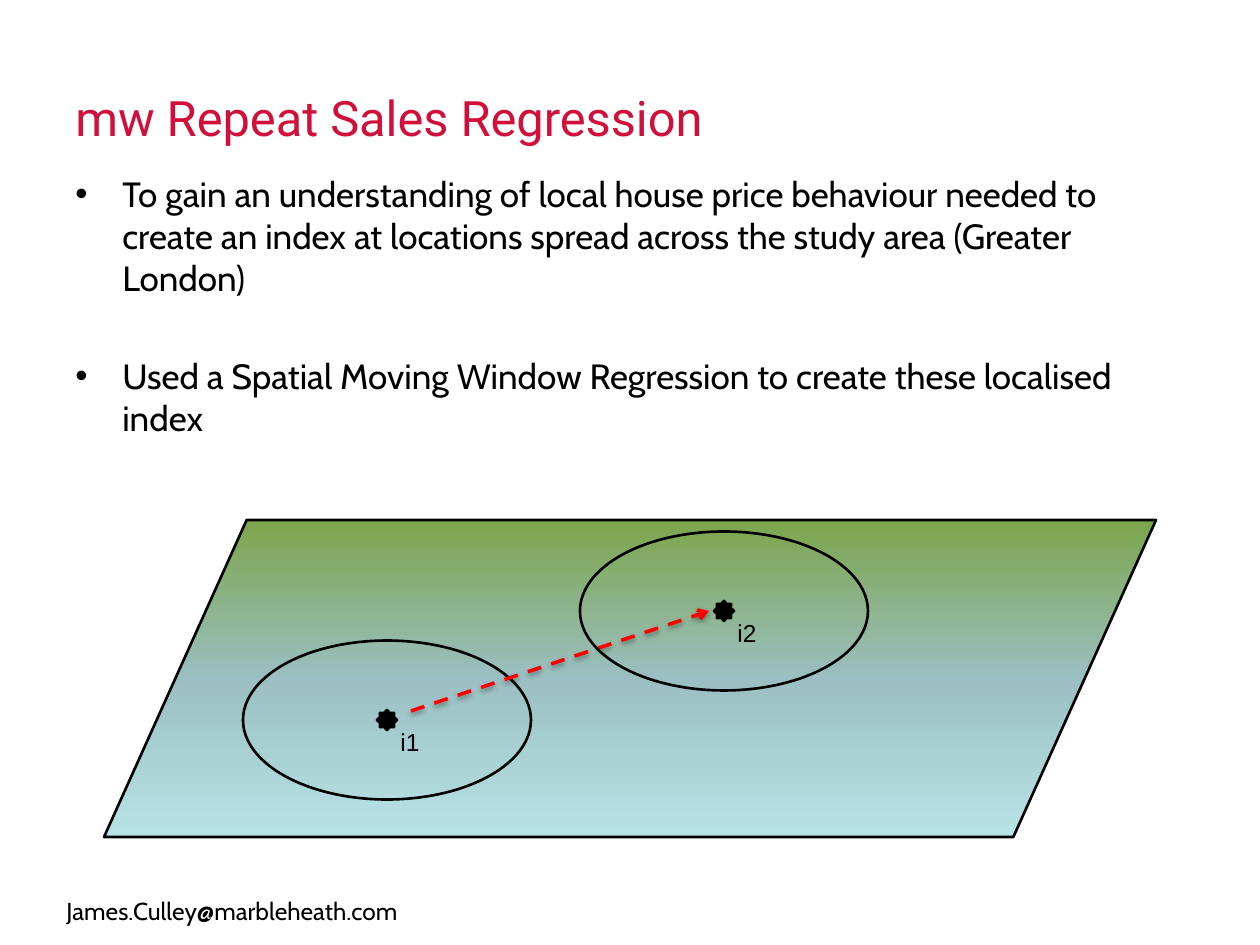
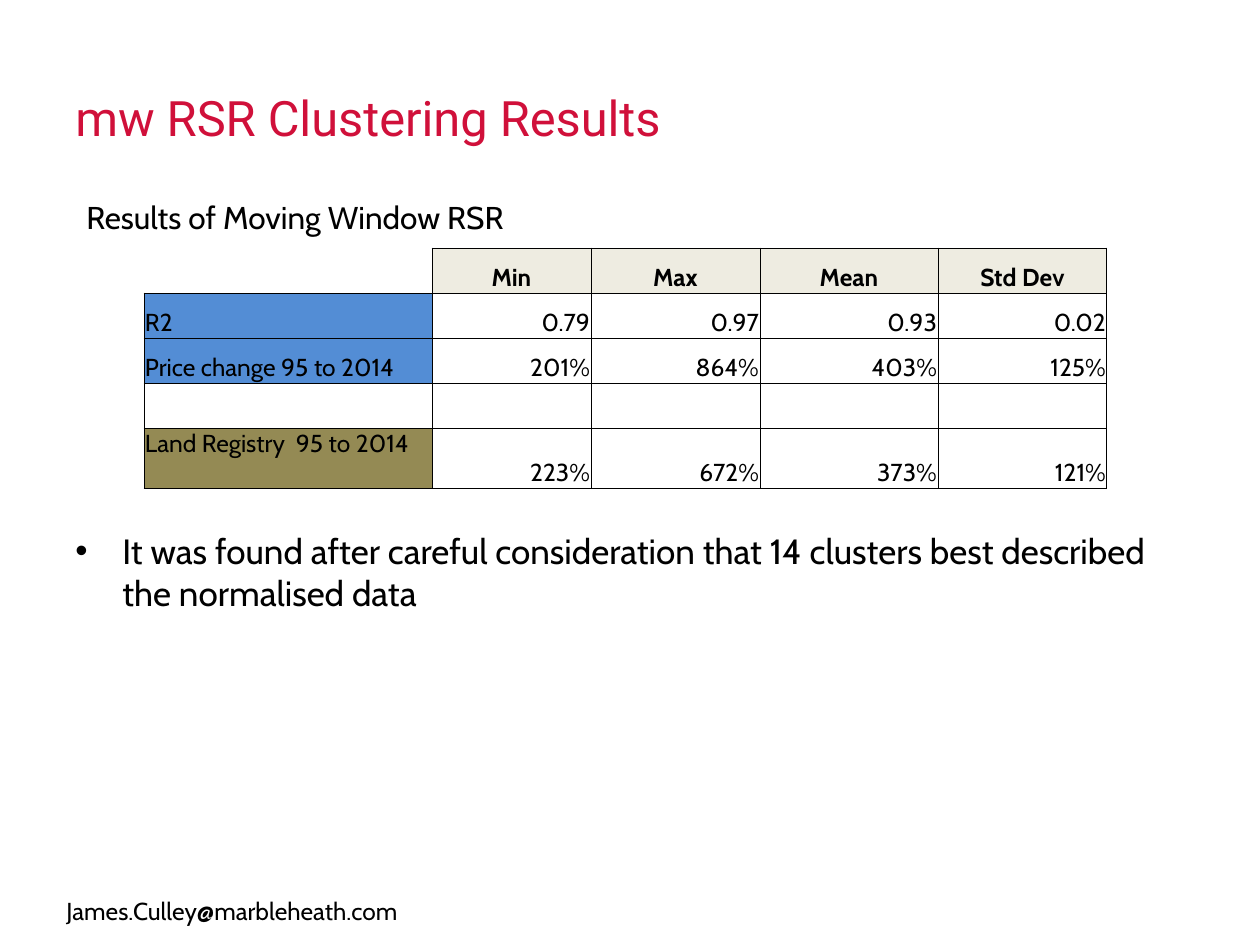
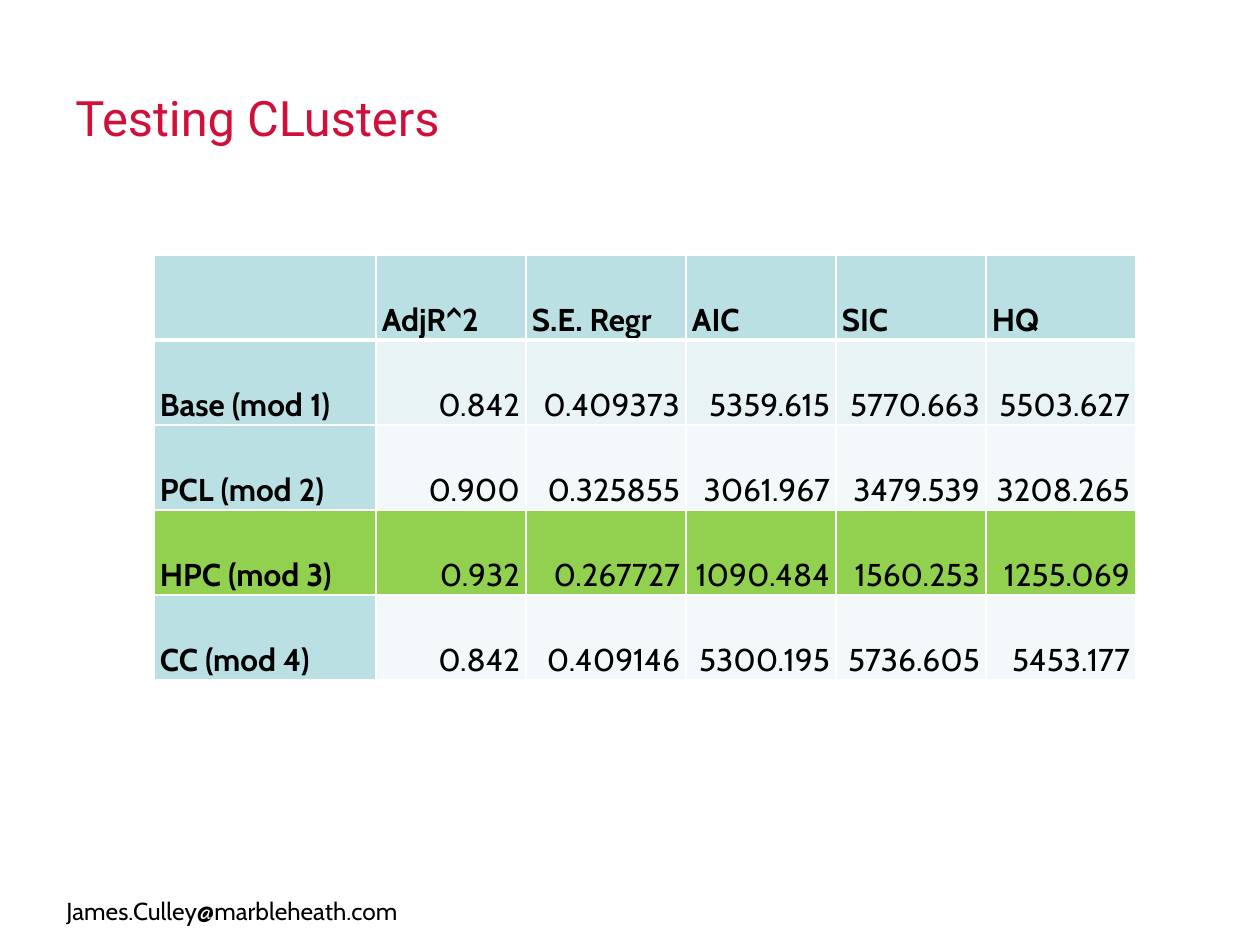
from copy import deepcopy

from lxml.etree import SubElement
from pptx import Presentation
from pptx.dml.color import RGBColor
from pptx.enum.dml import MSO_LINE
from pptx.enum.shapes import MSO_CONNECTOR, MSO_SHAPE
from pptx.enum.text import MSO_ANCHOR as Anchor, PP_ALIGN as Align
from pptx.oxml.ns import qn
from pptx.util import Pt

EMU_PER_PX = 914400 / 126
SLIDE_SIZE = (1260, 945)

BLACK = RGBColor(0x00, 0x00, 0x00)
WHITE = RGBColor(0xFF, 0xFF, 0xFF)
RED = RGBColor(0xFF, 0x00, 0x00)
CRIMSON = RGBColor(0xD0, 0x10, 0x3A)
BEIGE = RGBColor(0xEE, 0xEC, 0xE1)
BLUE = RGBColor(0x53, 0x8D, 0xD5)
OLIVE = RGBColor(0x94, 0x8A, 0x54)
TEAL = RGBColor(0xBB, 0xE0, 0xE3)
PALE_TEAL = RGBColor(0xE7, 0xF3, 0xF4)
PALEST_TEAL = RGBColor(0xF3, 0xF9, 0xFA)
GREEN = RGBColor(0x92, 0xD0, 0x50)
AREA_GRADIENT = ((0, RGBColor(0x7C, 0xA5, 0x4B)),
                 (0.5, RGBColor(0x9B, 0xBF, 0xC2)),
                 (1, RGBColor(0xB8, 0xE3, 0xE6)))

TITLE = {"name": "Roboto", "size": Pt(27.9), "color": CRIMSON}
BODY = {"name": "Cabin", "size": Pt(20), "color": BLACK}
CAPTION = BODY | {"size": Pt(18)}
SMALL = BODY | {"size": Pt(14)}
LABEL = SMALL | {"name": "Arial"}
FOOTER_TEXT = "James.Culley@marbleheath.com"


def px(length):
    return round(length * EMU_PER_PX)


def set_font(font, style):
    for name, value in style.items():
        if name == "color":
            font.color.rgb = value
        else:
            setattr(font, name, value)


def add_solid_color(parent, color):
    fill = SubElement(parent, qn("a:solidFill"))
    return SubElement(fill, qn("a:srgbClr"), val=str(color))


class Deck:
    def __init__(self):
        self.presentation = Presentation()
        self.presentation.slide_width, self.presentation.slide_height = map(px, SLIDE_SIZE)
        self.slide = None

    def new_slide(self, title):
        """Start a slide with the shared title and footer."""
        self.slide = self.presentation.slides.add_slide(self.presentation.slide_layouts[6])
        self.text((63, 38, 1134, 157), [title], TITLE, anchor=Anchor.MIDDLE)
        self.text((54, 890, 625, 43), [FOOTER_TEXT], SMALL)

    def text(self, box, lines, style, anchor=Anchor.TOP, wrap=True, bullets=False):
        frame = self.slide.shapes.add_textbox(*map(px, box)).text_frame
        frame.word_wrap = wrap
        frame.vertical_anchor = anchor
        for index, line in enumerate(lines):
            paragraph = frame.paragraphs[0] if index == 0 else frame.add_paragraph()
            if index:
                paragraph.space_before = Pt(32)
            if bullets:
                properties = paragraph._p.get_or_add_pPr()
                properties.set("marL", str(px(47)))
                properties.set("indent", str(px(-47)))
                SubElement(properties, qn("a:buFont"), typeface="Arial")
                SubElement(properties, qn("a:buChar"), char="•")
            run = paragraph.add_run()
            run.text = line
            set_font(run.font, style)

    def bullets(self, box, lines):
        self.text(box, lines, BODY, bullets=True)

    def shape(self, kind, box, fill=None):
        """Add a black-outlined shape; without a fill it is see-through."""
        shape = self.slide.shapes.add_shape(kind, *map(px, box))
        shape.shadow.inherit = False
        shape.line.color.rgb = BLACK
        shape.line.width = Pt(1.5)
        if fill is None:
            shape.fill.background()
        else:
            shape.fill.solid()
            shape.fill.fore_color.rgb = fill
        return shape

    def study_area(self, box):
        area = self.shape(MSO_SHAPE.PARALLELOGRAM, box)
        area.adjustments[0] = 0.45
        area.fill.gradient()
        area.fill.gradient_angle = 270
        stops = area._element.spPr.find(".//" + qn("a:gsLst"))
        stops.append(deepcopy(stops[-1]))
        for stop, (position, color) in zip(area.fill.gradient_stops, AREA_GRADIENT):
            stop.position = position
            stop.color.rgb = color

    def window(self, center_x, center_y, label):
        """Draw a regression window around a labelled point."""
        for kind, width, height, fill in ((MSO_SHAPE.STAR_8_POINT, 20, 20, BLACK),
                                          (MSO_SHAPE.OVAL, 288, 159, None)):
            self.shape(kind, (center_x - width / 2, center_y - height / 2, width, height), fill)
        self.text((center_x + 1, center_y + 1, 44, 43), [label], LABEL, wrap=False)

    def dashed_arrow(self, start, end):
        arrow = self.slide.shapes.add_connector(MSO_CONNECTOR.STRAIGHT, *map(px, start + end))
        arrow.line.color.rgb = RED
        arrow.line.width = Pt(2)
        arrow.line.dash_style = MSO_LINE.DASH
        properties = arrow._element.spPr
        SubElement(properties.find(qn("a:ln")), qn("a:tailEnd"), type="arrow")
        effects = SubElement(properties, qn("a:effectLst"))
        shadow = SubElement(effects, qn("a:outerShdw"), blurRad="40000", dist="20000",
                            dir="5400000", rotWithShape="0")
        color = SubElement(shadow, qn("a:srgbClr"), val=str(BLACK))
        SubElement(color, qn("a:alpha"), val="38000")

    def table(self, corner, widths, heights, rows, format_cell):
        """Fill a table; format_cell(row, column) gives the look of each cell."""
        frame = self.slide.shapes.add_table(len(rows), len(widths), *map(
            px, (*corner, sum(widths), sum(heights))))
        table = frame.table
        table.first_row = table.horz_banding = False
        for column, width in zip(table.columns, widths):
            column.width = px(width)
        for row, height in zip(table.rows, heights):
            row.height = px(height)
        for row_index, values in enumerate(rows):
            for column_index, value in enumerate(values):
                self.cell(table.cell(row_index, column_index), value,
                          **format_cell(row_index, column_index))

    def cell(self, cell, value, style, align, fill, borders, margins, anchor=Anchor.BOTTOM):
        cell.vertical_anchor = anchor
        for side, margin in zip(("left", "top", "right", "bottom"), margins):
            setattr(cell, "margin_" + side, px(margin))
        properties = cell._tc.get_or_add_tcPr()
        for side in "LRTB":
            if side in borders:
                color, width = borders[side]
                line = SubElement(properties, qn("a:ln" + side), w=str(Pt(width)))
                add_solid_color(line, color)
        if fill is None:
            cell.fill.background()
        else:
            cell.fill.solid()
            cell.fill.fore_color.rgb = fill
        if value:
            paragraph = cell.text_frame.paragraphs[0]
            paragraph.alignment = align
            run = paragraph.add_run()
            run.text = value
            set_font(run.font, style)


def format_result(row, column):
    label_fills = (None, BLUE, BLUE, None, OLIVE)
    header = row == 0
    if column == 0:
        fill, align = label_fills[row], Align.LEFT
    else:
        fill, align = (BEIGE, Align.CENTER) if header else (None, Align.RIGHT)
    sides = "RB" if header and column == 0 else "LRTB"
    return {"style": SMALL | {"bold": header}, "align": align, "fill": fill,
            "borders": dict.fromkeys(sides, (BLACK, 0.5)), "margins": (1, 1, 1, 0),
            "anchor": Anchor.TOP if (row, column) == (4, 0) else Anchor.BOTTOM}


def format_test(row, column):
    best_row = 3
    heading = row == 0 or column == 0
    if row == best_row:
        fill = GREEN
    elif heading:
        fill = TEAL
    else:
        fill = PALE_TEAL if row == 1 else PALEST_TEAL
    borders = dict.fromkeys("LRTB", (WHITE, 1))
    if row < 2:
        borders["B" if row == 0 else "T"] = (WHITE, 3)
    return {"style": CAPTION | {"bold": heading}, "fill": fill, "borders": borders,
            "align": Align.LEFT if heading else Align.RIGHT, "margins": (6, 0, 6, 0)}


def main():
    deck = Deck()

    deck.new_slide("mw Repeat Sales Regression")
    deck.bullets((63, 166, 1134, 704), [
        "To gain an understanding of local house price behaviour needed to create an index "
        "at locations spread across the study area (Greater London)",
        "Used a Spatial Moving Window Regression to create these localised index",
    ])
    deck.study_area((104, 520, 1052, 317))
    deck.window(387, 720, "i1")
    deck.dashed_arrow((411, 711), (709, 611))
    deck.window(724, 611, "i2")

    deck.new_slide("mw RSR Clustering Results")
    deck.text((74, 192, 1101, 50), ["Results of Moving Window RSR"], CAPTION)
    deck.table((144, 248), (288, 159, 169, 178, 169), (45, 45, 45, 45, 60), (
        ("", "Min", "Max", "Mean", "Std Dev"),
        ("R2", "0.79", "0.97", "0.93", "0.02"),
        ("Price change 95 to 2014", "201%", "864%", "403%", "125%"),
        ("",) * 5,
        ("Land Registry  95 to 2014", "223%", "672%", "373%", "121%"),
    ), format_result)
    deck.bullets((63, 523, 1134, 348), [
        "It was found after careful consideration that 14 clusters best described "
        "the normalised data",
    ])

    deck.new_slide("Testing CLusters")
    deck.table((154, 255), (222, 150, 160, 150, 150, 150), (85,) * 5, (
        ("", "AdjR^2", "S.E. Regr", "AIC", "SIC", "HQ"),
        ("Base (mod 1)", "0.842", "0.409373", "5359.615", "5770.663", "5503.627"),
        ("PCL (mod 2)", "0.900", "0.325855", "3061.967", "3479.539", "3208.265"),
        ("HPC (mod 3)", "0.932", "0.267727", "1090.484", "1560.253", "1255.069"),
        ("CC (mod 4)", "0.842", "0.409146", "5300.195", "5736.605", "5453.177"),
    ), format_test)

    deck.presentation.save("out.pptx")


if __name__ == "__main__":
    main()
